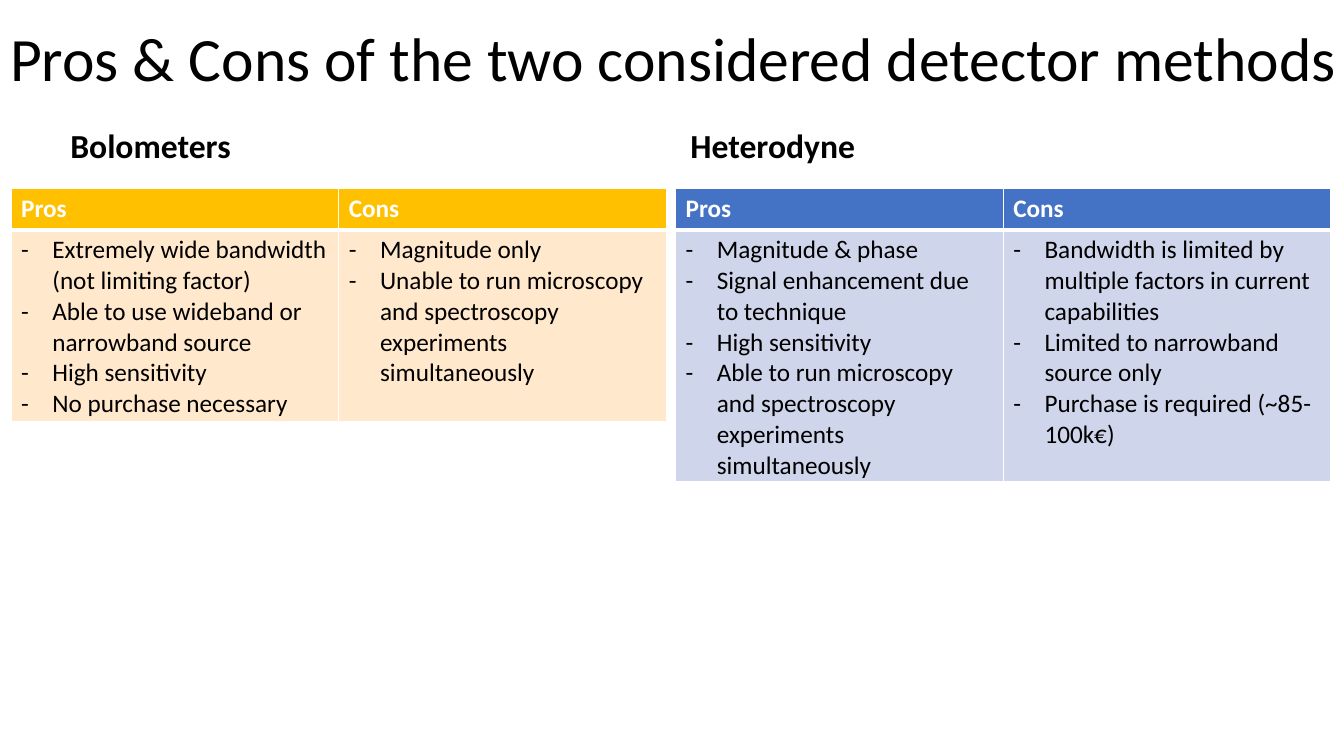
from dataclasses import dataclass

from lxml import etree
from pptx import Presentation
from pptx import util as u
from pptx.dml.color import RGBColor
from pptx.enum import text
from pptx.oxml import ns


@dataclass
class Method:
    name: str
    left: float
    head_left: float
    head_width: float
    height: float
    dark: str
    light: str
    pros: list[str]
    cons: list[str]


METHODS = [
    Method("Bolometers", 0.11, 0.6, 5.64, 1.9, "FFC000", "FFE8CC",
           ["Extremely wide bandwidth (not limiting factor)",
            "Able to use wideband or narrowband source",
            "High sensitivity",
            "No purchase necessary"],
           ["Magnitude only",
            "Unable to run microscopy and spectroscopy experiments simultaneously"]),
    Method("Heterodyne", 6.7, 6.75, 5.67, 2.5, "4472C4", "CFD5EA",
           ["Magnitude & phase",
            "Signal enhancement due to technique",
            "High sensitivity",
            "Able to run microscopy and spectroscopy experiments simultaneously"],
           ["Bandwidth is limited by multiple factors in current capabilities",
            "Limited to narrowband source only",
            "Purchase is required (~85-100k€)"]),
]


def color(code: str) -> RGBColor:
    return RGBColor.from_string(code)


def style(frame, size: int, code: str, bold: bool) -> None:
    for para in frame.paragraphs:
        para.alignment = text.PP_ALIGN.LEFT
        for run in para.runs:
            run.font.name = "Calibri"
            run.font.size = u.Pt(size)
            run.font.bold = bold
            run.font.color.rgb = color(code)


def place(shape, left: float, top: float, width: float, height: float) -> None:
    shape.left, shape.top = u.Inches(left), u.Inches(top)
    shape.width, shape.height = u.Inches(width), u.Inches(height)


def border(cell, sides: dict[str, int]) -> None:
    props = cell._tc.get_or_add_tcPr()
    for spot, (side, width) in enumerate(sides.items()):
        line = etree.Element(ns.qn(f"a:ln{side}"), w=str(u.Pt(width)))
        fill = etree.SubElement(line, ns.qn("a:solidFill"))
        etree.SubElement(fill, ns.qn("a:srgbClr"), val="FFFFFF")
        props.insert(spot, line)


def bullet(para) -> None:
    props = para._p.get_or_add_pPr()
    indent = u.Inches(0.31)
    props.set("marL", str(indent))
    props.set("indent", str(-indent))
    etree.SubElement(props, ns.qn("a:buFont"), typeface="Calibri")
    etree.SubElement(props, ns.qn("a:buChar"), char="-")


def add_title(slide) -> None:
    title = slide.shapes.title
    place(title, 0, -0.11, 13.5, 1.45)
    frame = title.text_frame
    frame.text = "Pros & Cons of the two considered detector methods"
    frame.word_wrap = True
    frame.auto_size = text.MSO_AUTO_SIZE.NONE
    frame.vertical_anchor = text.MSO_ANCHOR.MIDDLE
    frame.paragraphs[0].line_spacing = 0.9
    style(frame, 44, "000000", False)


def add_head(slide, method: Method) -> None:
    box = slide.shapes.add_textbox(0, 0, 0, 0)
    place(box, method.head_left, 0.79, method.head_width, 0.9)
    frame = box.text_frame
    frame.text = method.name
    frame.word_wrap = True
    frame.vertical_anchor = text.MSO_ANCHOR.BOTTOM
    frame.paragraphs[0].line_spacing = 0.9
    frame.paragraphs[0].space_before = u.Pt(10)
    style(frame, 24, "000000", True)


def add_grid(slide, method: Method) -> None:
    head = 0.41
    grid = slide.shapes.add_table(
        2, 2, u.Inches(method.left), u.Inches(1.87),
        u.Inches(6.5), u.Inches(head + method.height)).table
    grid.rows[0].height = u.Inches(head)
    grid.rows[1].height = u.Inches(method.height)
    columns = [("Pros", method.pros), ("Cons", method.cons)]
    for col, (label, points) in enumerate(columns):
        top, body = grid.cell(0, col), grid.cell(1, col)
        top.text_frame.text = label
        body.text_frame.text = "\n".join(points)
        style(top.text_frame, 18, "FFFFFF", True)
        style(body.text_frame, 18, "000000", False)
        for para in body.text_frame.paragraphs:
            bullet(para)
        for cell, code in ((top, method.dark), (body, method.light)):
            cell.fill.solid()
            cell.fill.fore_color.rgb = color(code)
        border(top, {"L": 1, "R": 1, "T": 1, "B": 3})
        border(body, {"L": 1, "R": 1, "T": 3, "B": 1})


def main() -> None:
    deck = Presentation()
    deck.slide_width, deck.slide_height = u.Inches(13.33), u.Inches(7.5)
    slide = deck.slides.add_slide(deck.slide_layouts[5])
    add_title(slide)
    for method in METHODS:
        add_head(slide, method)
        add_grid(slide, method)
    deck.save("out.pptx")


if __name__ == "__main__":
    main()
